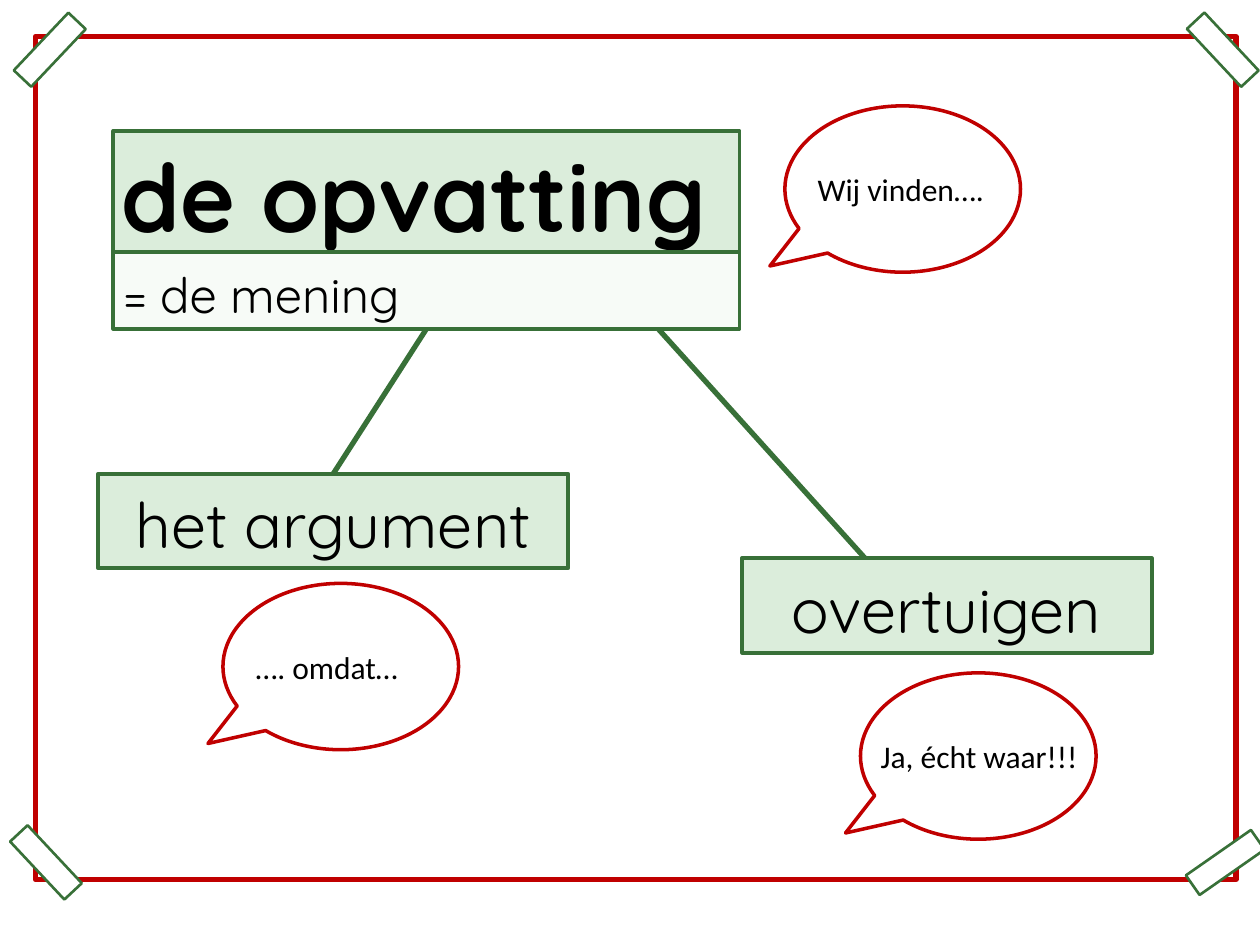
from dataclasses import dataclass

from lxml import etree
from pptx import Presentation
from pptx.dml.color import RGBColor
from pptx.enum.shapes import MSO_CONNECTOR, MSO_SHAPE
from pptx.enum.text import PP_ALIGN
from pptx.oxml.ns import qn
from pptx.util import Inches, Pt

RECTANGLE, CALLOUT = MSO_SHAPE.RECTANGLE, MSO_SHAPE.OVAL_CALLOUT
STRAIGHT = MSO_CONNECTOR.STRAIGHT
LEFT, CENTER = PP_ALIGN.LEFT, PP_ALIGN.CENTER
COLUMNS, ROWS = 100, 75
CELL = Inches(0.1)


@dataclass(frozen=True)
class Theme:
    """Colours, fonts, type sizes and line widths."""
    green: str = "387038"
    mint: str = "DBEDDB"
    pale: str = "F7FBF7"
    red: str = "C00000"
    white: str = "FFFFFF"
    black: str = "000000"
    word_font: str = "Quicksand"
    speech_font: str = "Calibri"
    title: float = 54
    word: float = 36
    meaning: float = 28
    speech: float = 18
    thick: float = 3
    edge: float = 2.25
    bubble: float = 2
    thin: float = 1.5


@dataclass(frozen=True)
class Box:
    """A rectangle in grid columns and rows."""
    x: float
    y: float
    w: float
    h: float

    def emu(self):
        """Return left, top, width and height in slide units."""
        return [round(n * CELL) for n in (self.x, self.y, self.w, self.h)]

    def inner(self, dx, dy, w, h):
        """Return a box placed relative to this one."""
        return Box(self.x + dx, self.y + dy, w, h)


THEME = Theme()
WORD_SPACING = {"line_spacing": 1.07, "space_after": Pt(8)}


def apply(target, values):
    """Set each named attribute on the target."""
    for name, value in values.items():
        setattr(target, name, value)


def outline(shape, color, width):
    """Give a shape or connector its line."""
    shape.line.color.rgb = RGBColor.from_string(color)
    shape.line.width = Pt(width)


def add_panel(slide, box, line, width, fill=None, kind=RECTANGLE):
    """Draw an outlined shape, filled or hollow."""
    panel = slide.shapes.add_shape(kind, *box.emu())
    panel.shadow.inherit = False
    if fill:
        panel.fill.solid()
        panel.fill.fore_color.rgb = RGBColor.from_string(fill)
    else:
        panel.fill.background()
    outline(panel, line, width)
    return panel


def add_text(slide, box, text, font, layout):
    """Write one paragraph in a wrapping text box."""
    frame = slide.shapes.add_textbox(*box.emu()).text_frame
    frame.word_wrap = True
    paragraph = frame.paragraphs[0]
    apply(paragraph, layout)
    run = paragraph.add_run()
    run.text = text
    apply(run.font, font)
    run.font.color.rgb = RGBColor.from_string(THEME.black)


def add_label(slide, box, text_box, text, size, fill=THEME.mint, align=CENTER, bold=False):
    """Draw a green-edged panel with its word."""
    add_panel(slide, box, THEME.green, THEME.edge, fill)
    font = {"name": THEME.word_font, "size": Pt(size), "bold": bold}
    add_text(slide, text_box, text, font, {"alignment": align, **WORD_SPACING})


def add_taped_frame(slide, box):
    """Draw the red frame with a strip of tape on each corner."""
    add_panel(slide, box, THEME.red, THEME.thick)
    strip_w, strip_h = 6.3, 1.9
    corners = [(1, 1, -0.85, -1.35, 325.1), (0, 1, 0.85, -1.35, 46.9),
               (0, 0, 1.15, 1.05, 133.4), (1, 0, -1.05, 1.05, 46.9)]
    for right, bottom, dx, dy, angle in corners:
        strip = box.inner(right * box.w + dx - strip_w / 2,
                          bottom * box.h + dy - strip_h / 2, strip_w, strip_h)
        add_panel(slide, strip, THEME.green, THEME.thin, THEME.white).rotation = angle


def add_link(slide, upper, upper_share, lower, lower_share):
    """Join the bottom of one box to the top of another."""
    ends = (lower.x + lower_share * lower.w, lower.y,
            upper.x + upper_share * upper.w, upper.y + upper.h)
    link = slide.shapes.add_connector(STRAIGHT, *(round(n * CELL) for n in ends))
    outline(link, THEME.green, THEME.thick)
    etree.SubElement(link._element.spPr, qn("a:effectLst"))


def add_bubble(slide, box, text, dx=1.6, width=15.8):
    """Draw a speech bubble with its line of text."""
    bubble = add_panel(slide, box, THEME.red, THEME.bubble, kind=CALLOUT)
    bubble.adjustments[0], bubble.adjustments[1] = -0.564, 0.463
    font = {"name": THEME.speech_font, "size": Pt(THEME.speech)}
    add_text(slide, box.inner(dx, 4.6, width, 4), text, font, {"alignment": LEFT})


def add_concept(slide, box, meaning):
    """Draw the main word above its meaning."""
    add_label(slide, box, box.inner(-0.6, -0.6, 51, 6.3), "de opvatting ",
              THEME.title, bold=True)
    add_label(slide, meaning, meaning.inner(-0.2, 0.2, 44.5, 5.2), "= de mening",
              THEME.meaning, THEME.pale, LEFT)


def add_word_web(slide, box):
    """Place the frame, words, links and speech bubbles."""
    persuade = box.inner(58.9, 44.3, 32.5, 7.5)
    argument = box.inner(7.8, 37.6, 37.3, 7.5)
    concept = box.inner(9, 10.4, 49.7, 9.7)
    meaning = box.inner(9, 20, 49.7, 6.1)
    add_label(slide, persuade, persuade.inner(0.3, 0.1, 31.8, 5.8), "overtuigen", THEME.word)
    add_label(slide, argument, argument.inner(0, 0, 37.3, 6), "het argument", THEME.word)
    add_taped_frame(slide, box.inner(2.8, 2.9, 95.3, 66.9))
    add_link(slide, meaning, 0.87, persuade, 0.3)
    add_concept(slide, concept, meaning)
    add_link(slide, meaning, 0.5, argument, 0.5)
    bubble_w, bubble_h = 18.7, 13.2
    add_bubble(slide, box.inner(62.3, 8.4, bubble_w, bubble_h), "Wij vinden….")
    add_bubble(slide, box.inner(17.7, 46.3, bubble_w, bubble_h), "…. omdat…")
    add_bubble(slide, box.inner(68.3, 53.4, bubble_w, bubble_h), "Ja, écht waar!!!", 0.6, 18.8)


def main():
    """Build and save the slide."""
    deck = Presentation()
    apply(deck, {"slide_width": COLUMNS * CELL, "slide_height": ROWS * CELL})
    slide = deck.slides.add_slide(deck.slide_layouts[6])
    add_word_web(slide, Box(0, 0, COLUMNS, ROWS))
    deck.save("out.pptx")


if __name__ == "__main__":
    main()
